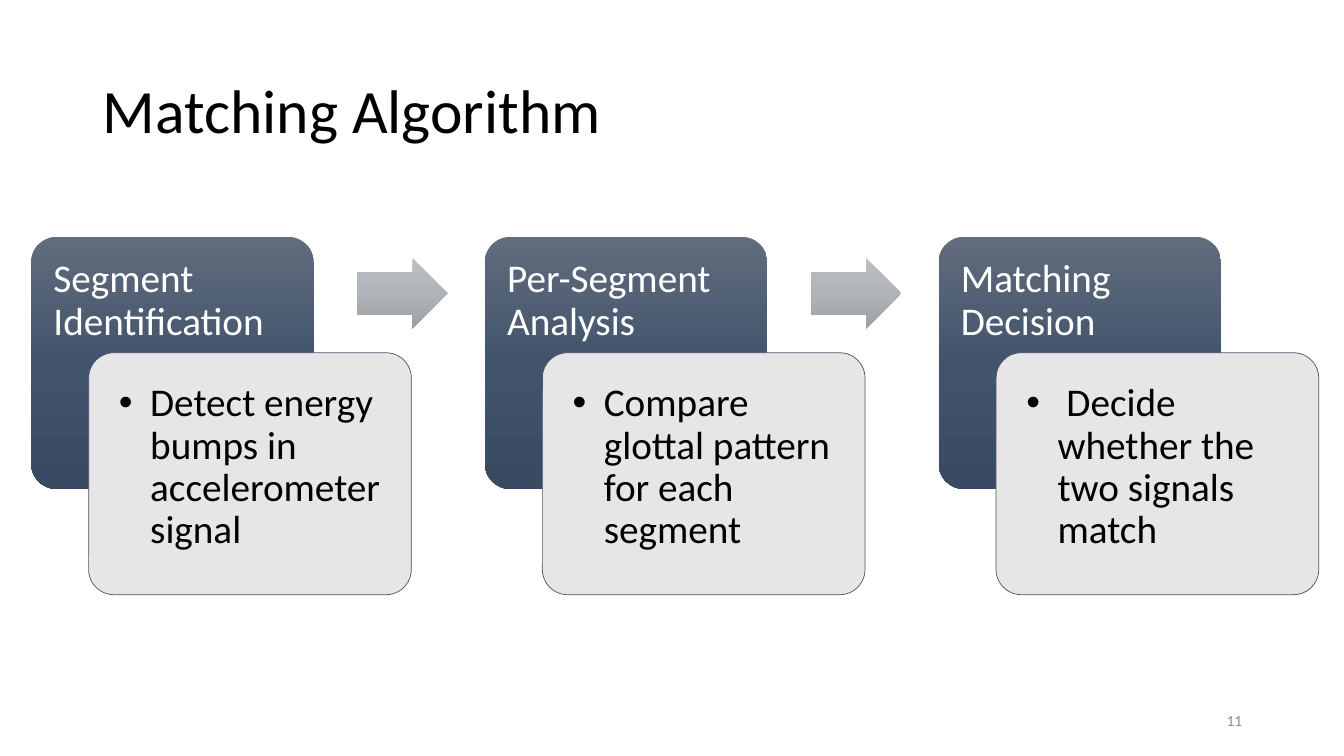
from dataclasses import dataclass

from lxml import etree
from pptx import Presentation
from pptx import util as u
from pptx.dml.color import RGBColor
from pptx.enum import shapes, text
from pptx.oxml import ns


@dataclass(frozen=True)
class Theme:
    font: str = "Calibri"
    ink: str = "000000"
    white: str = "FFFFFF"
    muted: str = "8C8C8C"
    card: str = "E7E6E6"
    card_edge: str = "44546A"
    header_shades: tuple = ("616C7D", "42546C", "394A62")
    arrow_shades: tuple = ("BABDC2", "B0B4B9", "9BA0A5")
    title_size: int = 44
    step_size: int = 28
    number_size: int = 11


THEME = Theme()
STEPS = [
    ("Segment Identification", "Detect energy bumps in accelerometer signal"),
    ("Per-Segment Analysis", "Compare glottal pattern for each segment"),
    ("Matching Decision", " Decide whether the two signals match"),
]
STEP_LEFT, STEP_TOP, STEP_PITCH = 0.31, 2.35, 4.5
CORNER = 0.25
# A rounded rectangle already pulls its text in by this share of its corner
CORNER_INSET = 0.29 * CORNER


def apply_format(target, values):
    for name, value in values.items():
        setattr(target, name, value)


def write(shape, words, size, color, insets=None, bullet_indent=None,
          align=text.PP_ALIGN.LEFT, anchor=text.MSO_ANCHOR.TOP, spacing=0.9):
    frame = shape.text_frame
    apply_format(frame, {"word_wrap": True, "vertical_anchor": anchor,
                         "auto_size": text.MSO_AUTO_SIZE.NONE})
    if insets:
        sides = ("margin_left", "margin_top", "margin_right", "margin_bottom")
        apply_format(frame, {side: u.Inches(inset - CORNER_INSET)
                             for side, inset in zip(sides, insets)})
    paragraph = frame.paragraphs[0]
    paragraph.text = words
    if bullet_indent:
        props = paragraph._p.get_or_add_pPr()
        props.set("marL", str(u.Inches(bullet_indent)))
        props.set("indent", str(-u.Inches(bullet_indent)))
        etree.SubElement(props, ns.qn("a:buFont"), typeface="Arial")
        etree.SubElement(props, ns.qn("a:buChar"), char="•")
    apply_format(paragraph, {"alignment": align, "line_spacing": spacing})
    apply_format(paragraph.font, {"name": THEME.font, "size": u.Pt(size)})
    paragraph.font.color.rgb = RGBColor.from_string(color)


def add_plain_shape(slide, kind, box):
    shape = slide.shapes.add_shape(kind, *map(u.Inches, box))
    shape.shadow.inherit = False
    shape.line.fill.background()
    return shape


def add_rounded(slide, box):
    shape = add_plain_shape(slide, shapes.MSO_SHAPE.ROUNDED_RECTANGLE, box)
    shape.adjustments[0] = CORNER / min(box[2:])
    return shape


def shade_downward(shape, shades):
    shape.fill.gradient()
    gradient = shape._element.spPr.find(ns.qn("a:gradFill"))
    for child in list(gradient):
        gradient.remove(child)
    stops = etree.SubElement(gradient, ns.qn("a:gsLst"))
    for index, shade in enumerate(shades):
        stop = etree.SubElement(stops, ns.qn("a:gs"), pos=str(index * 50000))
        etree.SubElement(stop, ns.qn("a:srgbClr"), val=shade)
    etree.SubElement(gradient, ns.qn("a:lin"), ang="5400000", scaled="0")


def add_title(slide, box):
    title = slide.shapes.title
    apply_format(title, dict(zip(("left", "top", "width", "height"),
                                 map(u.Inches, box))))
    write(title, "Matching Algorithm", THEME.title_size, THEME.ink,
          anchor=text.MSO_ANCHOR.MIDDLE)


def add_step(slide, left, top, heading, detail):
    # Dark heading block
    header = add_rounded(slide, (left, top, 2.8, 2.5))
    shade_downward(header, THEME.header_shades)
    write(header, heading, THEME.step_size, THEME.white,
          insets=(0.22, 0.22, 0.22, 1.5))

    # Light detail card overlapping it
    card = add_rounded(slide, (left + 0.57, top + 1.15, 3.2, 2.4))
    card.fill.solid()
    card.fill.fore_color.rgb = RGBColor.from_string(THEME.card)
    card.line.color.rgb = RGBColor.from_string(THEME.card_edge)
    card.line.width = u.Pt(0.5)
    write(card, detail, THEME.step_size, THEME.ink,
          insets=(0.3, 0.3, 0.25, 0.3), bullet_indent=0.31)


def add_step_arrow(slide, left, top):
    arrow = add_plain_shape(slide, shapes.MSO_SHAPE.RIGHT_ARROW,
                            (left + 3.23, top + 0.21, 0.9, 0.7))
    arrow.adjustments[0] = 0.6
    arrow.adjustments[1] = 0.5
    shade_downward(arrow, THEME.arrow_shades)


def add_page_number(slide, box):
    number = slide.shapes.add_textbox(*map(u.Inches, box))
    write(number, "11", THEME.number_size, THEME.muted, spacing=1.0,
          align=text.PP_ALIGN.RIGHT, anchor=text.MSO_ANCHOR.MIDDLE)


def main():
    deck = Presentation()
    deck.slide_width, deck.slide_height = u.Inches(13.33), u.Inches(7.5)
    slide = deck.slides.add_slide(deck.slide_layouts.get_by_name("Title Only"))

    add_title(slide, (0.92, 0.4, 11.5, 1.45))
    for index, (heading, detail) in enumerate(STEPS):
        left = STEP_LEFT + index * STEP_PITCH
        add_step(slide, left, STEP_TOP, heading, detail)
        if index < len(STEPS) - 1:
            add_step_arrow(slide, left, STEP_TOP)
    add_page_number(slide, (9.42, 6.95, 3, 0.4))

    deck.save("out.pptx")


if __name__ == "__main__":
    main()
